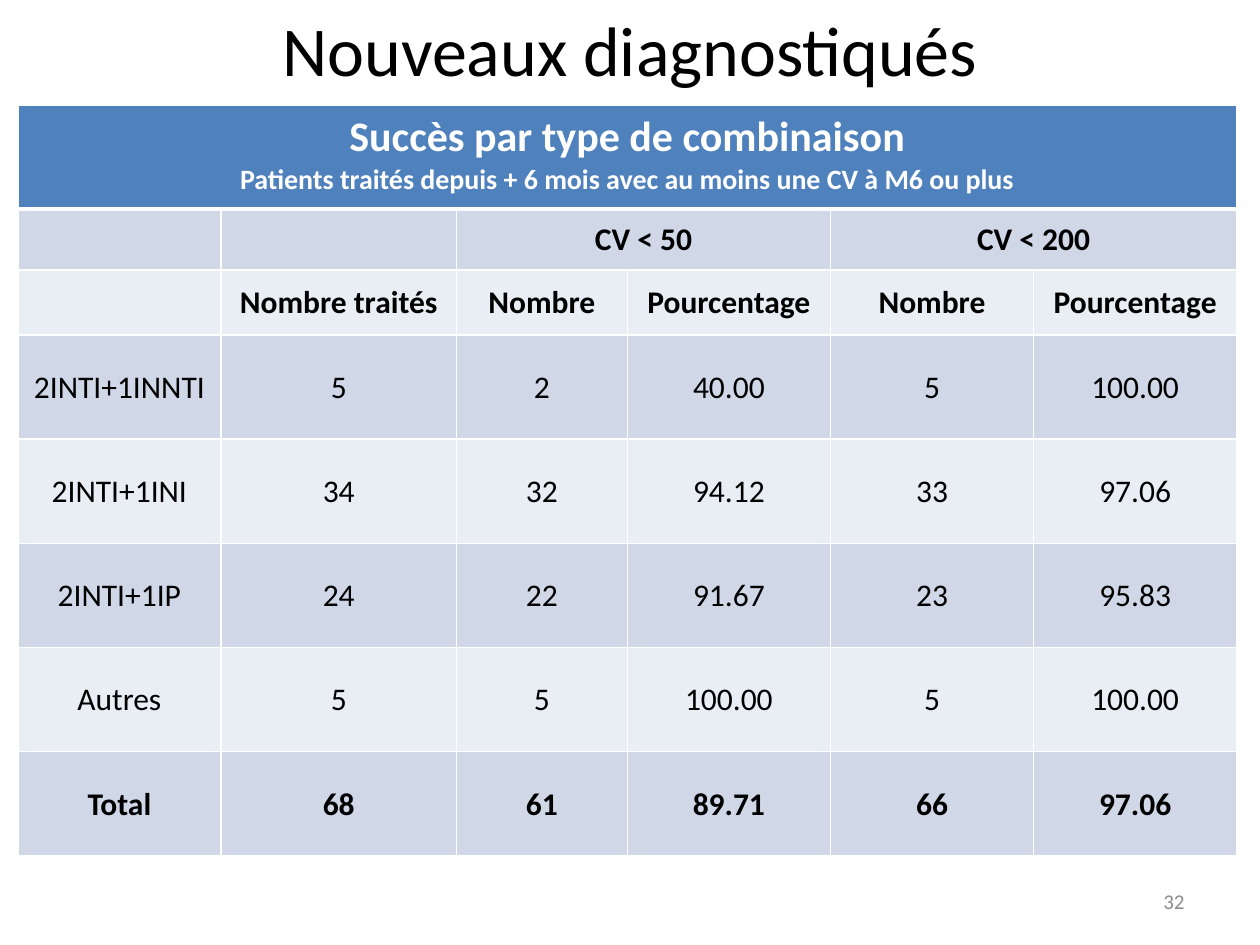
"""Build a slide with a table of treatment success by drug combination."""
from lxml.etree import SubElement as Sub
from pptx import Presentation as Deck
from pptx.dml.color import RGBColor as Rgb
from pptx.enum.text import MSO_ANCHOR as Anchor, PP_ALIGN as Align
from pptx.oxml.ns import qn
from pptx.util import Pt

TITLE = "Nouveaux diagnostiqués"
PAGE = "32"
HEAD = [("Succès par type de combinaison", 24),
        ("Patients traités depuis + 6 mois avec au moins une CV à M6 ou plus", 16)]
ROWS = [
    ["", "", "CV < 50", "", "CV < 200", ""],
    ["", "Nombre traités", "Nombre", "Pourcentage", "Nombre", "Pourcentage"],
    ["2INTI+1INNTI", "5", "2", "40.00", "5", "100.00"],
    ["2INTI+1INI", "34", "32", "94.12", "33", "97.06"],
    ["2INTI+1IP", "24", "22", "91.67", "23", "95.83"],
    ["Autres", "5", "5", "100.00", "5", "100.00"],
    ["Total", "68", "61", "89.71", "66", "97.06"],
]
WIDTHS = [116.1, 134.6, 97.6, 116.1, 116.1, 116.1]
HEIGHTS = [59.5, 34.8, 37.2] + [59.5] * 5
SPANS = [(0, 0, 5), (1, 2, 3), (1, 4, 5)]
BOLD = {1, 2, len(ROWS)}
COLORS = {"head": "4F81BD", "odd": "D0D8E8", "even": "E9EDF4",
          "white": "FFFFFF", "black": "000000", "gray": "8C8C8C"}


def tint(name):
    return Rgb.from_string(COLORS[name])


def write(frame, text, size=18, color="black", bold=False, align=Align.CENTER, more=False):
    para = frame.add_paragraph() if more else frame.paragraphs[0]
    para.alignment = align
    run = para.add_run()
    run.text = text
    font = run.font
    font.name, font.size, font.bold = "Calibri", Pt(size), bold
    font.color.rgb = tint(color)


def box(slide, left, top, width, height, text, anchor=Anchor.TOP, **style):
    frame = slide.shapes.add_textbox(Pt(left), Pt(top), Pt(width), Pt(height)).text_frame
    frame.word_wrap = True
    frame.vertical_anchor = anchor
    write(frame, text, **style)


def edge(cell, row):
    props = cell._tc.get_or_add_tcPr()
    for side in "LRTB":
        thick = 3 if (row, side) in {(0, "B"), (1, "T")} else 1
        line = Sub(props, qn(f"a:ln{side}"), w=str(Pt(thick)))
        Sub(Sub(line, qn("a:solidFill")), qn("a:srgbClr"), val=COLORS["white"])


def grid(slide):
    table = slide.shapes.add_table(len(HEIGHTS), len(WIDTHS), Pt(10.2), Pt(60),
                                   Pt(sum(WIDTHS)), Pt(sum(HEIGHTS))).table
    for col, width in zip(table.columns, WIDTHS):
        col.width = Pt(width)
    for row, height in enumerate(HEIGHTS):
        table.rows[row].height = Pt(height)
        for col in range(len(WIDTHS)):
            cell = table.cell(row, col)
            edge(cell, row)
            cell.fill.solid()
            cell.fill.fore_color.rgb = tint("head" if row == 0 else "odd" if row % 2 else "even")
            if row == 0:
                continue
            cell.vertical_anchor = Anchor.MIDDLE
            if row > 2:
                cell.margin_left = cell.margin_right = cell.margin_top = Pt(0.7)
                cell.margin_bottom = Pt(0)
            text = ROWS[row - 1][col]
            if text:
                write(cell.text_frame, text, bold=row in BOLD)
    for row, start, end in SPANS:
        table.cell(row, start).merge(table.cell(row, end))
    for num, (text, size) in enumerate(HEAD):
        write(table.cell(0, 0).text_frame, text, size=size, color="white", bold=True, more=num > 0)


def main():
    deck = Deck()
    deck.slide_width, deck.slide_height = Pt(720), Pt(540)
    slide = deck.slides.add_slide(deck.slide_layouts[6])
    box(slide, 516, 500.5, 168, 28.8, PAGE, anchor=Anchor.MIDDLE,
        size=12, color="gray", align=Align.RIGHT)
    box(slide, 0, 0, 720, 55.7, TITLE, size=40)
    grid(slide)
    deck.save("out.pptx")


if __name__ == "__main__":
    main()
